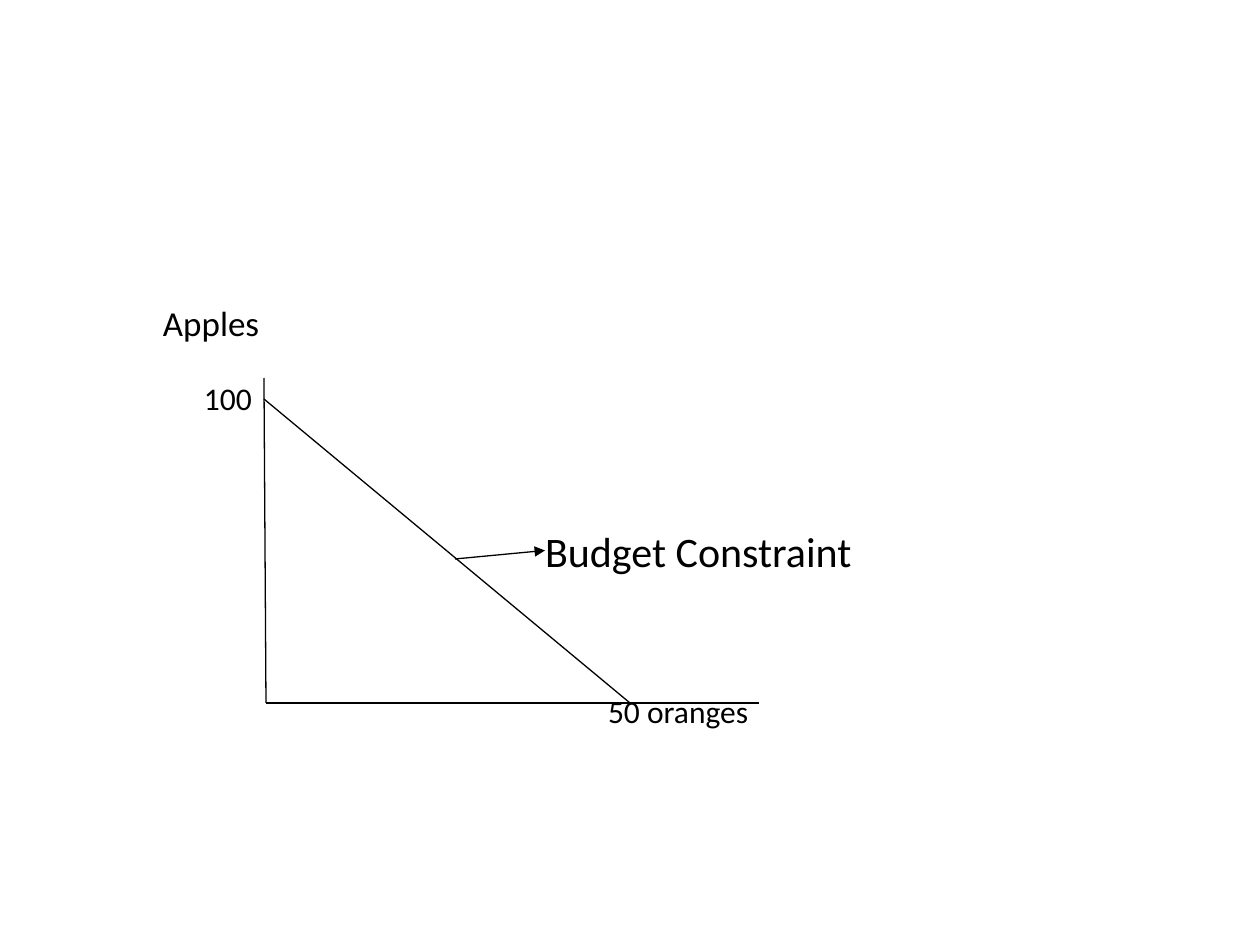
from pptx import Presentation
from pptx.dml.color import RGBColor
from pptx.enum.shapes import MSO_CONNECTOR
from pptx.enum.text import MSO_ANCHOR
from pptx.oxml.ns import qn
from pptx.util import Pt
from lxml import etree

SCALE = 914400 / 126
STRAIGHT = MSO_CONNECTOR.STRAIGHT
MIDDLE = MSO_ANCHOR.MIDDLE
LEFT_SIDE = 1
COLORS = {"ink": "000000", "back": "FFFFFF"}
INK = RGBColor.from_string(COLORS["ink"])


def emu(*sizes):
    """Turn px lengths into whole EMU."""
    return [round(n * SCALE) for n in sizes]


deck = Presentation()
deck.slide_width, deck.slide_height = emu(1260, 945)
slide = deck.slides.add_slide(deck.slide_layouts[6])
fill = slide.background.fill
fill.solid()
fill.fore_color.rgb = RGBColor.from_string(COLORS["back"])

# Labels: text, left, top, width, height, point size
labels = [
    ("Apples", 163, 301, 98, 43, 20),
    ("100", 204, 379, 50, 38, 18),
    ("Budget Constraint", 545, 525, 310, 51, 24),
    ("50 oranges", 608, 692, 144, 38, 18),
]
boxes = {}
for text, *place, size in labels:
    box = slide.shapes.add_textbox(*emu(*place))
    frame = box.text_frame
    form = {"margin_left": 0, "margin_right": 0, "margin_top": 0,
            "margin_bottom": 0, "word_wrap": True, "vertical_anchor": MIDDLE}
    for name, value in form.items():
        setattr(frame, name, value)
    run = frame.paragraphs[0].add_run()
    run.text = text
    for name, value in {"name": "Calibri", "size": Pt(size)}.items():
        setattr(run.font, name, value)
    run.font.color.rgb = INK
    boxes[text] = box

# Start x and y, end x and y: two axes, budget line, pointer
lines = [
    (266, 703, 759, 703),
    (264, 378, 266, 703),
    (264, 399, 630, 703),
    (455, 559, 545, 551),
]
for ends in lines:
    line = slide.shapes.add_connector(STRAIGHT, *emu(*ends))
    line.line.width = Pt(0.75)
    line.line.color.rgb = INK
    etree.SubElement(line._element.spPr, qn("a:effectLst"))

# The last line points at its label
line.end_connect(boxes["Budget Constraint"], LEFT_SIDE)
etree.SubElement(line.line._get_or_add_ln(), qn("a:tailEnd"), type="triangle")

deck.save("out.pptx")
